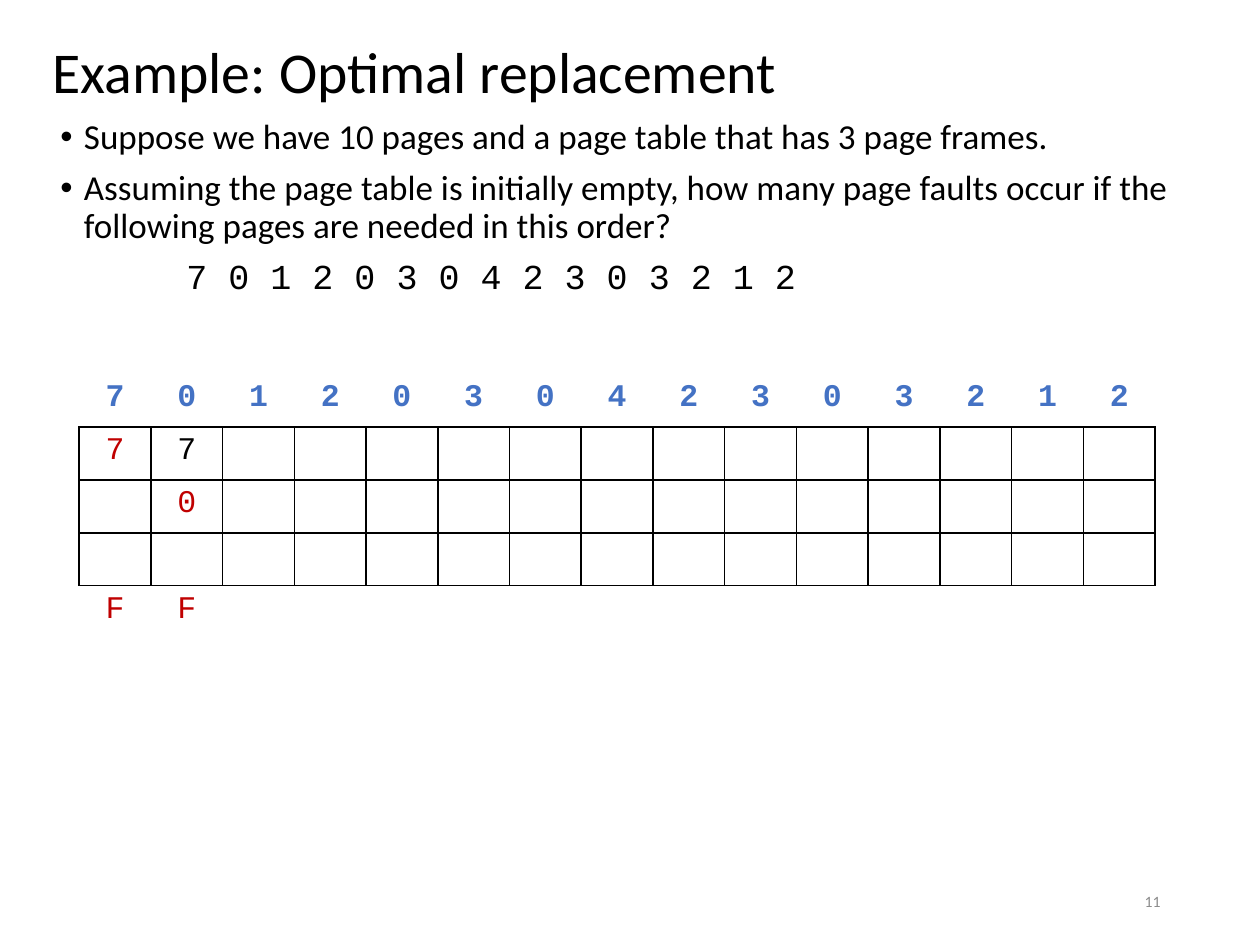
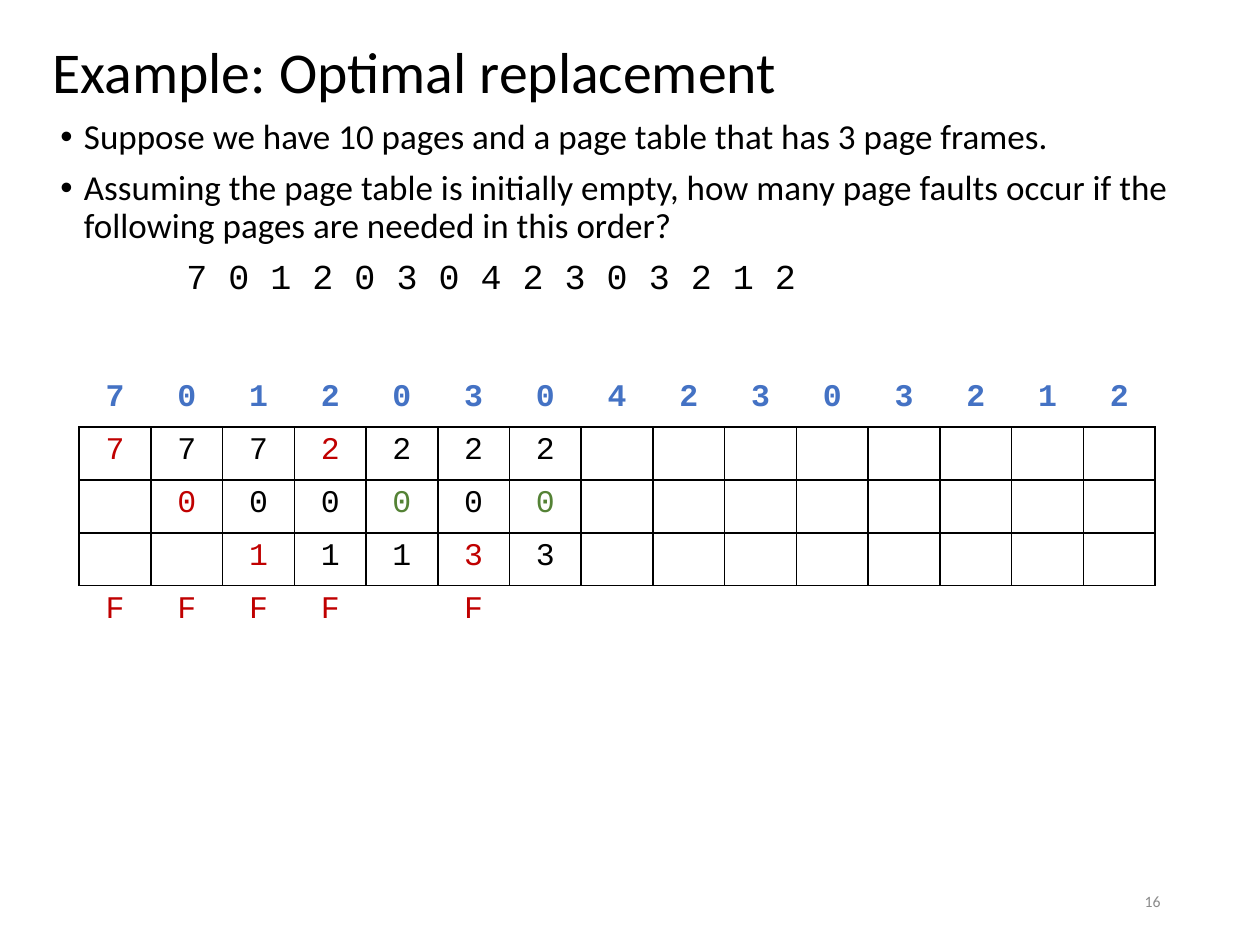
"""Build two slides that step through optimal page replacement."""
from dataclasses import dataclass

from lxml.etree import SubElement
from pptx import Presentation
from pptx.dml.color import RGBColor
from pptx.enum.text import MSO_ANCHOR, PP_ALIGN
from pptx.oxml.ns import qn
from pptx.util import Pt

TITLE = "Example: Optimal replacement"
BULLETS = [
    "Suppose we have 10 pages and a page table that has 3 page frames.",
    "Assuming the page table is initially empty, how many page faults occur "
    "if the following pages are needed in this order?",
]
REQUESTS = "7 0 1 2 0 3 0 4 2 3 0 3 2 1 2"
FRAME_COUNT = 3
STAGES = [
    {"slide_number": "11", "steps_shown": 2},
    {"slide_number": "16", "steps_shown": 7},
]


@dataclass(frozen=True)
class Theme:
    text: str = "000000"
    request: str = "4472C4"
    fault: str = "C00000"
    hit: str = "548235"
    footer: str = "8C8C8C"
    sans: str = "Calibri"
    mono: str = "Courier New"
    title_size: float = 33
    body_size: float = 20
    cell_size: float = 18
    footer_size: float = 9
    rule_width: float = 1


THEME = Theme()
SLIDE_SIZE = (720, 540)
TITLE_BOX = (23, 7.2, 673, 71.3)
BODY_BOX = (27.4, 64.8, 669.6, 468)
NUMBER_BOX = (508.3, 500.4, 162, 28.8)
TABLE_LEFT, TABLE_TOP = 45.2, 213.8
COLUMN_WIDTH, ROW_HEIGHT = 41, 30.24
BULLET_INDENT = 13.5
REQUEST_INDENT = 72
NO_STYLE = "{2D5ABB26-0587-4C30-8999-92F81FD0307C}"


def write(paragraph, text, *, size=THEME.body_size, font=THEME.sans, color=THEME.text,
          bold=False, align=PP_ALIGN.LEFT, spacing=None, before=None, indent=0, bullet=None):
    paragraph.alignment = align
    paragraph.line_spacing = spacing
    if before is not None:
        paragraph.space_before = Pt(before)
    properties = paragraph._p.get_or_add_pPr()
    properties.set("marL", str(Pt(indent)))
    properties.set("indent", str(-Pt(indent) if bullet else 0))
    if bullet:
        SubElement(properties, qn("a:buFont"), typeface="Arial")
        SubElement(properties, qn("a:buChar"), char=bullet)
    run = paragraph.add_run()
    run.text = text
    run.font.size, run.font.name, run.font.bold = Pt(size), font, bold
    run.font.color.rgb = RGBColor.from_string(color)


def add_frame(slide, box, anchor=MSO_ANCHOR.TOP):
    frame = slide.shapes.add_textbox(*map(Pt, box)).text_frame
    frame.word_wrap = True
    frame.vertical_anchor = anchor
    return frame


def add_body(slide):
    body = add_frame(slide, BODY_BOX)
    for position, bullet in enumerate(BULLETS):
        paragraph = body.add_paragraph() if position else body.paragraphs[0]
        write(paragraph, bullet, spacing=0.9, before=7.5, indent=BULLET_INDENT, bullet="•")
    write(body.add_paragraph(), REQUESTS, font=THEME.mono, spacing=0.9, before=7.5,
          indent=REQUEST_INDENT)


def replace_optimally(pages):
    """Return the frames, the touched frame and the fault flag after each request."""
    frames, history = [], []
    for step, page in enumerate(pages):
        fault = page not in frames
        upcoming = pages[step + 1:]
        if fault and len(frames) < FRAME_COUNT:
            frames.append(page)
        elif fault:
            victim = max(frames, key=lambda held: upcoming.index(held)
                         if held in upcoming else len(pages))
            frames[frames.index(victim)] = page
        history.append((list(frames), frames.index(page), fault))
    return history


def draw_borders(cell, sides):
    properties = cell._tc.get_or_add_tcPr()
    for side in sides:
        line = SubElement(properties, qn(f"a:ln{side}"), w=str(Pt(THEME.rule_width)))
        fill = SubElement(line, qn("a:solidFill"))
        SubElement(fill, qn("a:srgbClr"), val=THEME.text)


def add_frame_table(slide, steps_shown):
    pages = REQUESTS.split()
    row_count = FRAME_COUNT + 2
    table = slide.shapes.add_table(
        row_count, len(pages), Pt(TABLE_LEFT), Pt(TABLE_TOP),
        Pt(COLUMN_WIDTH * len(pages)), Pt(ROW_HEIGHT * row_count)).table
    table.first_row = table.horz_banding = False
    table._tbl.tblPr.find(qn("a:tableStyleId")).text = NO_STYLE
    for column in table.columns:
        column.width = Pt(COLUMN_WIDTH)
    for position, row in enumerate(table.rows):
        row.height = Pt(ROW_HEIGHT)
        sides = {0: "B", row_count - 1: "T"}.get(position, "LRTB")
        for cell in row.cells:
            draw_borders(cell, sides)
            cell.fill.background()

    def fill_cell(row, column, text, color, bold=False):
        write(table.cell(row, column).text_frame.paragraphs[0], text, size=THEME.cell_size,
              font=THEME.mono, color=color, bold=bold, align=PP_ALIGN.CENTER)

    for column, page in enumerate(pages):
        fill_cell(0, column, page, THEME.request, bold=True)
    for column, (frames, touched, fault) in enumerate(replace_optimally(pages)[:steps_shown]):
        accent = THEME.fault if fault else THEME.hit
        for position, page in enumerate(frames):
            fill_cell(position + 1, column, page, accent if position == touched else THEME.text)
        if fault:
            fill_cell(row_count - 1, column, "F", THEME.fault)


def main():
    deck = Presentation()
    deck.slide_width, deck.slide_height = map(Pt, SLIDE_SIZE)
    for stage in STAGES:
        slide = deck.slides.add_slide(deck.slide_layouts[6])
        add_body(slide)
        write(add_frame(slide, TITLE_BOX, MSO_ANCHOR.MIDDLE).paragraphs[0], TITLE,
              size=THEME.title_size, spacing=0.9)
        write(add_frame(slide, NUMBER_BOX, MSO_ANCHOR.MIDDLE).paragraphs[0],
              stage["slide_number"], size=THEME.footer_size, color=THEME.footer,
              align=PP_ALIGN.RIGHT)
        add_frame_table(slide, stage["steps_shown"])
    deck.save("out.pptx")


if __name__ == "__main__":
    main()
